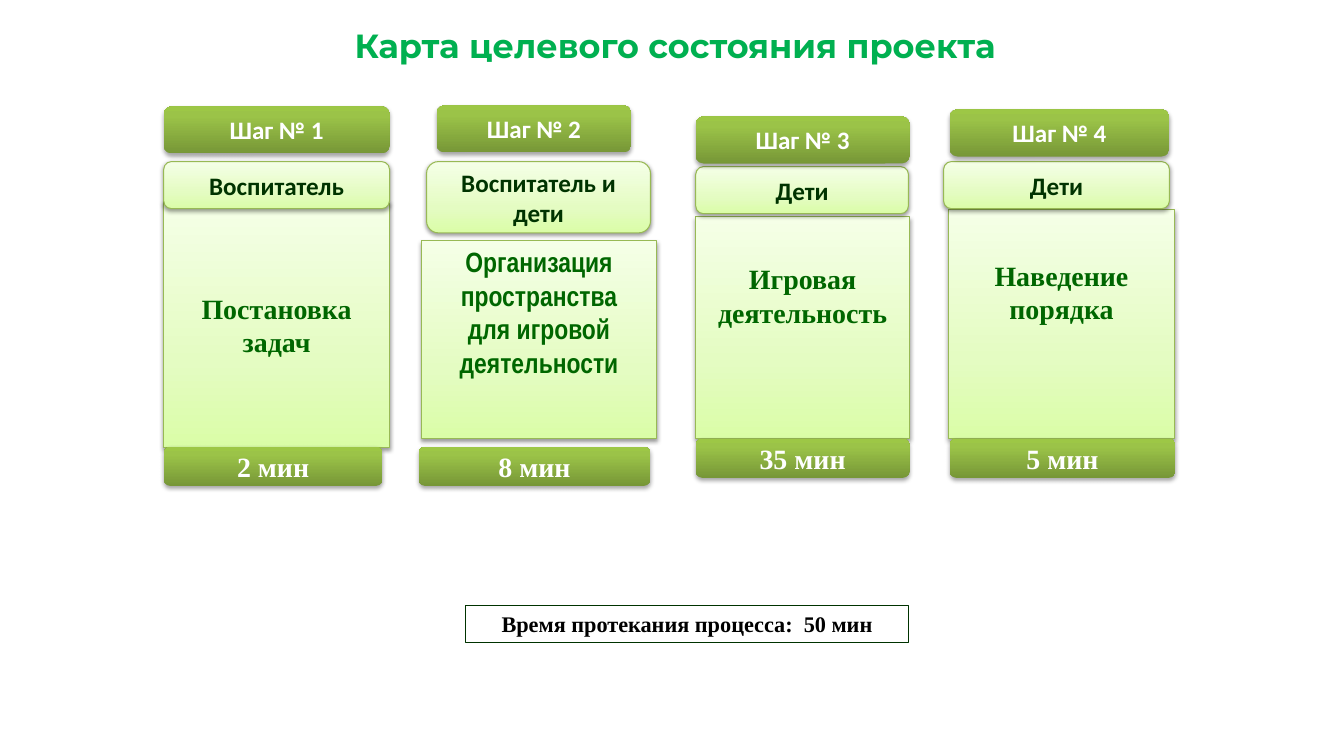
from dataclasses import dataclass

from lxml import etree
from pptx import Presentation
from pptx.dml.color import RGBColor
from pptx.enum import shapes, text
from pptx.oxml import ns
from pptx.util import Pt

SERIF, SANS, NARROW = "Times New Roman", "Calibri", "Arial Narrow"
BAR_H, TIME_H = 33.8, 28.1


@dataclass
class Look:
    stops: list
    shadow_alpha: int
    shadow_distance: float
    line: str = ""


DARK = Look([(0, "779737"), (80, "9BC348"), (100, "9DC746")], 35, 1.8)
PALE = Look([(0, "DAFDA7"), (35, "E4FCC2"), (100, "F5FFE7")], 38, 1.6, "98B955")


@dataclass
class Step:
    """One column: bar, role, body and duration, each with its frame."""
    bar: tuple
    role: str
    role_frame: tuple
    body: list
    body_frame: tuple
    body_format: dict
    duration: str
    duration_frame: tuple


STEPS = [
    Step((117.4, 76.3, 162, BAR_H),
         "Воспитатель", (117.4, 115.9, 162, BAR_H),
         ["Постановка задач"], (117.4, 144.7, 162, 176.4), {},
         "2 мин", (117.4, 320.4, 157, TIME_H)),
    Step((313.2, 75.6, 139.7, BAR_H),
         "Воспитатель и дети", (306, 115.9, 160.6, 51.1),
         ["Организация пространства", "для игровой деятельности"],
         (302.4, 172.8, 168.5, 141.8), {"font": NARROW, "top": 0, "bottom": 40},
         "8 мин", (300.2, 320.4, 166.3, TIME_H)),
    Step((499, 83.5, 153.4, BAR_H),
         "Дети", (499, 119.5, 152.6, BAR_H),
         ["Игровая деятельность"], (499, 155.5, 153.4, 159.1), {"bottom": 50},
         "35 мин", (499, 314.6, 153.4, TIME_H)),
    Step((681.1, 78.5, 157.7, BAR_H),
         "Дети", (676.8, 115.9, 162, BAR_H),
         ["Наведение порядка"], (680.4, 150.5, 162, 164.2), {"bottom": 50},
         "5 мин", (681.1, 314.6, 162, TIME_H)),
]


def rgb(value):
    return RGBColor.from_string(value)


def add_xml(parent, tag, **attributes):
    child = etree.SubElement(parent, ns.qn(tag))
    for key, value in attributes.items():
        child.set(key, str(value))
    return child


def write(frame, paragraphs, *, size, color, font=SERIF, wrap=True,
          anchor=text.MSO_ANCHOR.MIDDLE, top=3.6, bottom=3.6):
    frame.word_wrap = wrap
    frame.vertical_anchor = anchor
    frame.margin_top, frame.margin_bottom = Pt(top), Pt(bottom)
    frame.text = "\n".join(paragraphs)
    for paragraph in frame.paragraphs:
        paragraph.alignment = text.PP_ALIGN.CENTER
        style = paragraph.font
        style.name, style.size, style.bold = font, Pt(size), True
        style.color.rgb = rgb(color)


class ProcessMap:
    def __init__(self, slide):
        self.slide = slide

    def label(self, words, frame, outline=None, **text_format):
        box = self.slide.shapes.add_textbox(*map(Pt, frame))
        if outline:
            box.line.color.rgb = rgb(outline)
            box.line.width = Pt(0.75)
        write(box.text_frame, [words], anchor=text.MSO_ANCHOR.TOP, **text_format)

    def card(self, words, frame, look, rounded=True, **text_format):
        kind = shapes.MSO_SHAPE.ROUNDED_RECTANGLE if rounded else shapes.MSO_SHAPE.RECTANGLE
        card = self.slide.shapes.add_shape(kind, *map(Pt, frame))
        if look.line:
            card.line.color.rgb = rgb(look.line)
            card.line.width = Pt(0.75)
        else:
            card.line.fill.background()
        self.gradient(card, look)
        self.shadow(card, look)
        write(card.text_frame, words, **text_format)

    def gradient(self, card, look):
        """Fill the card upwards, first stop at the bottom."""
        card.fill.gradient()
        card.fill.gradient_angle = 90
        stop_list = card.fill._fill._gradFill.find(ns.qn("a:gsLst"))
        for stop in list(stop_list):
            stop_list.remove(stop)
        for position, color in look.stops:
            stop = add_xml(stop_list, "a:gs", pos=position * 1000)
            add_xml(stop, "a:srgbClr", val=color)

    def shadow(self, card, look):
        card.shadow.inherit = False
        effects = card._element.spPr.find(ns.qn("a:effectLst"))
        outer = add_xml(effects, "a:outerShdw", blurRad=Pt(3.1),
                        dist=Pt(look.shadow_distance), dir=90 * 60000, rotWithShape=0)
        color = add_xml(outer, "a:srgbClr", val="000000")
        add_xml(color, "a:alpha", val=look.shadow_alpha * 1000)

    def step(self, number, step):
        body_format = {"size": 20, "color": "006600", **step.body_format}
        self.card(step.body, step.body_frame, PALE, rounded=False, **body_format)
        self.card([step.duration], step.duration_frame, DARK, size=20, color="FFFFFF")
        self.card([step.role], step.role_frame, PALE, size=18, color="003300", font=SANS)
        self.card([f"Шаг № {number}"], step.bar, DARK, size=18, color="FFFFFF", font=SANS)


def main():
    deck = Presentation()
    deck.slide_width, deck.slide_height = Pt(964), Pt(538.6)
    process = ProcessMap(deck.slides.add_slide(deck.slide_layouts[6]))
    process.label("Карта целевого состояния проекта", (237.6, 14.4, 493.2, 36),
                  size=24, color="00B050", font="Montserrat", wrap=False)
    process.label("Время протекания процесса:  50 мин", (334.1, 434.2, 317.5, 26.6),
                  outline="003300", size=16, color="000000")
    for number, step in enumerate(STEPS, 1):
        process.step(number, step)
    deck.save("out.pptx")


if __name__ == "__main__":
    main()
